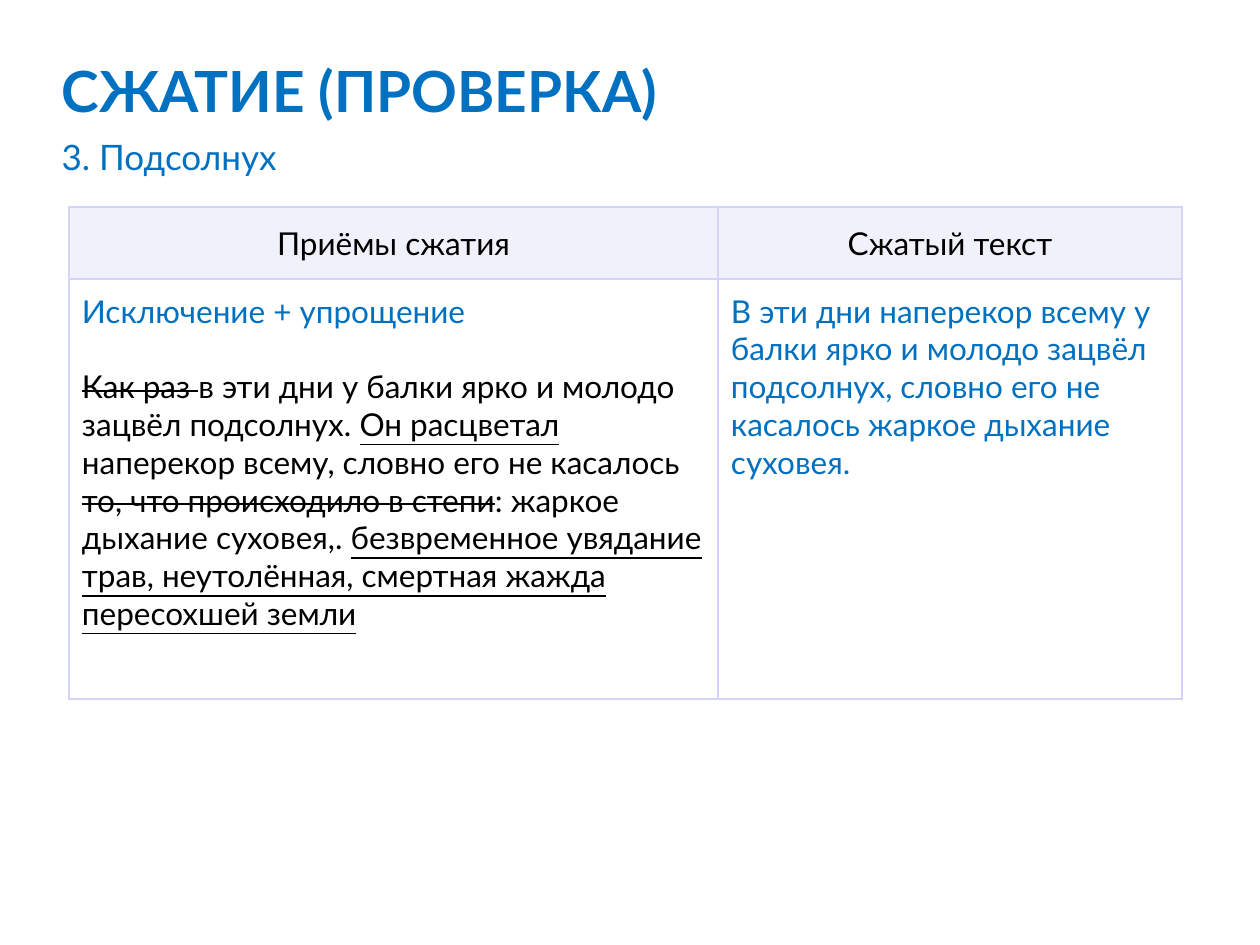
from lxml import etree
from pptx import Presentation
from pptx.dml.color import RGBColor
from pptx.enum.text import MSO_ANCHOR, MSO_AUTO_SIZE, PP_ALIGN
from pptx.oxml.ns import qn
from pptx.util import Pt

TOP, MIDDLE = MSO_ANCHOR.TOP, MSO_ANCHOR.MIDDLE
LEFT, CENTER = PP_ALIGN.LEFT, PP_ALIGN.CENTER
NO_FIT = MSO_AUTO_SIZE.NONE

EMU_PER_PX = 914400 / 126
THEME = {
    "font": "Lato",
    "blue": "0070C0", "black": "000000", "white": "FFFFFF",
    "header": "F1F1FC", "border": "D4D4F9",
    "title": 32.4, "subtitle": 20, "table": 18, "border_width": 1.5,
}


def px(length):
    return round(length * EMU_PER_PX)


def add_run(paragraph, text, size, color, strike=False, **formats):
    run = paragraph.add_run()
    run.text = text
    settings = {"name": THEME["font"], "size": Pt(THEME[size]), **formats}
    for name, value in settings.items():
        setattr(run.font, name, value)
    run.font.color.rgb = RGBColor.from_string(THEME[color])
    if strike:
        run.font._element.set("strike", "sngStrike")


presentation = Presentation()
presentation.slide_width, presentation.slide_height = px(1260), px(945)
slide = presentation.slides.add_slide(presentation.slide_layouts[1])

# Title and subtitle
headings = [
    (slide.shapes.title, (49, 49, 1142, 88), "СЖАТИЕ (ПРОВЕРКА)", "title", True),
    (slide.placeholders[1], (49, 129, 1162, 59), "3. Подсолнух", "subtitle", False),
]
for shape, box, text, size, bold in headings:
    for name, length in zip(("left", "top", "width", "height"), box):
        setattr(shape, name, px(length))
    frame_format = {"auto_size": NO_FIT, "vertical_anchor": TOP, "word_wrap": True}
    for name, value in frame_format.items():
        setattr(shape.text_frame, name, value)
    paragraph = shape.text_frame.paragraphs[0]
    paragraph.alignment = LEFT
    add_run(paragraph, text, size, "blue", bold=bold)

subtitle_properties = slide.placeholders[1].text_frame.paragraphs[0]._p.get_or_add_pPr()
subtitle_properties.set("marL", str(px(63)))
subtitle_properties.set("indent", str(px(-63)))
etree.SubElement(subtitle_properties, qn("a:buNone"))

# Table: each cell is a list of paragraphs, each paragraph a list of runs
STRIKE, UNDERLINE = {"strike": True}, {"underline": True}
rows = [
    [
        [[("Приёмы сжатия", "black", {})]],
        [[("Сжатый текст", "black", {})]],
    ],
    [
        [
            [("Исключение + упрощение", "blue", {})],
            [
                ("Как раз ", "black", STRIKE),
                ("в эти дни у балки ярко и молодо зацвёл подсолнух. ", "black", {}),
                ("Он расцветал ", "black", UNDERLINE),
                ("наперекор всему, словно его не касалось ", "black", {}),
                ("то, что происходило в степи", "black", STRIKE),
                (": жаркое дыхание суховея,. ", "black", {}),
                ("безвременное увядание трав, неутолённая, смертная жажда "
                 "пересохшей земли", "black", UNDERLINE),
            ],
        ],
        [[("В эти дни наперекор всему у балки ярко и молодо зацвёл подсолнух, "
           "словно его не касалось жаркое дыхание суховея.", "blue", {})]],
    ],
]
column_widths, row_heights = (649, 464), (72, 420)
row_formats = [("header", MIDDLE, CENTER), ("white", TOP, LEFT)]

table = slide.shapes.add_table(
    len(rows), len(column_widths), px(69), px(207),
    px(sum(column_widths)), px(sum(row_heights))).table
table.first_row = table.horz_banding = False
for column, width in zip(table.columns, column_widths):
    column.width = px(width)

for row, height, contents, (fill, anchor, alignment) in zip(
        table.rows, row_heights, rows, row_formats):
    row.height = px(height)
    for cell, paragraphs in zip(row.cells, contents):
        cell.vertical_anchor = anchor
        for side in ("left", "right", "top", "bottom"):
            setattr(cell, f"margin_{side}", px(13))
        cell_properties = cell._tc.get_or_add_tcPr()
        for edge in ("lnL", "lnR", "lnT", "lnB"):
            line = etree.SubElement(cell_properties, qn(f"a:{edge}"),
                                    w=str(Pt(THEME["border_width"])))
            line_fill = etree.SubElement(line, qn("a:solidFill"))
            etree.SubElement(line_fill, qn("a:srgbClr"), val=THEME["border"])
        cell.fill.solid()
        cell.fill.fore_color.rgb = RGBColor.from_string(THEME[fill])

        for index, runs in enumerate(paragraphs):
            if index == 0:
                paragraph = cell.text_frame.paragraphs[0]
            else:
                paragraph = cell.text_frame.add_paragraph()
                paragraph.space_before = Pt(21.6)
            paragraph.alignment = alignment
            for text, color, formats in runs:
                add_run(paragraph, text, "table", color, **formats)

presentation.save("out.pptx")
